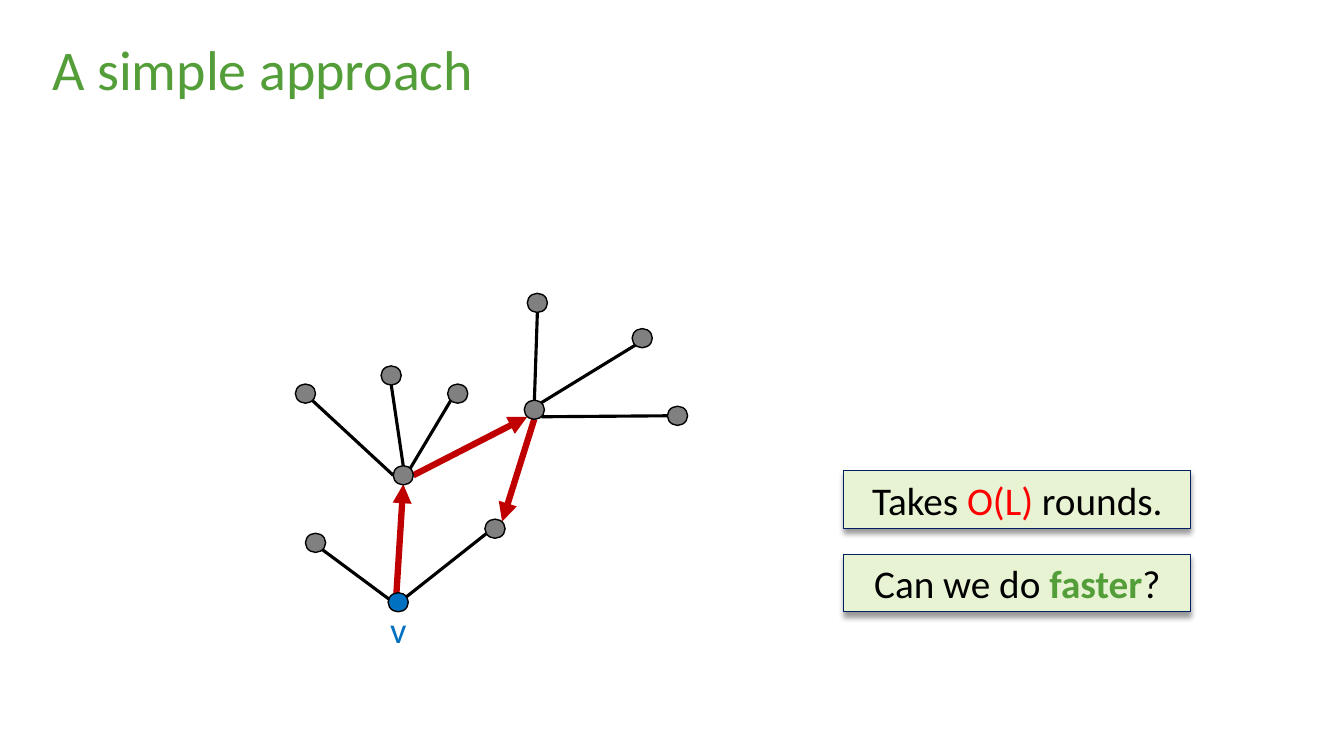
from lxml import etree
from pptx import Presentation
from pptx.dml.color import RGBColor
from pptx.enum.shapes import MSO_CONNECTOR, MSO_SHAPE
from pptx.enum.text import MSO_ANCHOR, MSO_AUTO_SIZE, PP_ALIGN
from pptx.oxml.ns import qn
from pptx.util import Inches, Pt

STRAIGHT = MSO_CONNECTOR.STRAIGHT
OVAL, RECTANGLE = MSO_SHAPE.OVAL, MSO_SHAPE.RECTANGLE
MIDDLE, FIT = MSO_ANCHOR.MIDDLE, MSO_AUTO_SIZE.SHAPE_TO_FIT_TEXT
LEFT, CENTER = PP_ALIGN.LEFT, PP_ALIGN.CENTER

BLACK = RGBColor(0x00, 0x00, 0x00)
GRAY = RGBColor(0x80, 0x80, 0x80)
BLUE = RGBColor(0x00, 0x70, 0xC0)
DARK_RED = RGBColor(0xC0, 0x00, 0x00)
RED = RGBColor(0xFF, 0x00, 0x00)
GREEN = RGBColor(0x54, 0x9E, 0x39)
PALE_GREEN = RGBColor(0xE8, 0xF3, 0xD4)
NAVY = RGBColor(0x00, 0x20, 0x60)
FONT = "Calibri"

# Content: node name -> left, top
NODE_WIDTH, NODE_HEIGHT = 0.2, 0.19
NODES = {
    "low left": (3.03, 5.29),
    "hub": (3.9, 4.62),
    "low right": (4.81, 5.15),
    "v": (3.85, 5.88),
    "hub left": (2.93, 3.81),
    "hub top": (3.78, 3.63),
    "hub right": (4.44, 3.81),
    "far hub": (5.2, 3.97),
    "far top": (5.23, 2.91),
    "far upper": (6.27, 3.26),
    "far right": (6.62, 4.03),
}

# Where edges meet a node, as offsets from its centre
SITES = {
    "N": (0, -0.09), "S": (0, 0.09), "W": (-0.1, 0), "E": (0.1, 0),
    "NE": (0.07, -0.07), "SE": (0.07, 0.07), "SW": (-0.07, 0.07),
    "inner N": (-0.02, -0.06), "inner W": (-0.09, -0.03),
    "inner E": (0.05, -0.03), "inner SW": (-0.05, 0.02),
}
TREE_EDGES = [
    ("low right", "inner SW", "v", "inner E"),
    ("low left", "SE", "v", "inner W"),
    ("hub right", "SW", "hub", "NE"),
    ("hub top", "S", "hub", "N"),
    ("hub left", "SE", "hub", "W"),
    ("far top", "S", "far hub", "N"),
    ("far upper", "SW", "far hub", "NE"),
    ("far right", "W", "far hub", "SE"),
]
WALK = [
    ("v", "inner N", "hub", "S"),
    ("hub", "E", "far hub", "SW"),
    ("far hub", "S", "low right", "NE"),
]

# Text spans: wording, colour, bold
TITLE = [("A simple approach", GREEN, False)]
NODE_LABEL = [("v", BLUE, False)]
CALLOUTS = [
    [("Takes ", BLACK, False), ("O(L)", RED, False), (" rounds.", BLACK, False)],
    [("Can we do ", BLACK, False), ("faster", GREEN, True), ("?", BLACK, False)],
]
CALLOUT_LEFT, CALLOUT_TOP, CALLOUT_STEP = 8.37, 4.67, 0.83
CALLOUT_WIDTH, CALLOUT_HEIGHT = 3.44, 0.57


def site_point(node, site):
    left, top = NODES[node]
    across, down = SITES[site]
    return (Inches(left + NODE_WIDTH / 2 + across),
            Inches(top + NODE_HEIGHT / 2 + down))


def add_edge(page, edge, color, width, arrow=False):
    start, start_site, end, end_site = edge
    line = page.shapes.add_connector(
        STRAIGHT, *site_point(start, start_site), *site_point(end, end_site))
    line.line.color.rgb = color
    line.line.width = Pt(width)
    if arrow:
        etree.SubElement(line.line._get_or_add_ln(), qn("a:tailEnd"), type="triangle")
    etree.SubElement(line._element.spPr, qn("a:effectLst"))


def add_solid(page, kind, box, fill, outline, width):
    shape = page.shapes.add_shape(kind, *map(Inches, box))
    shape.shadow.inherit = False
    shape.fill.solid()
    shape.fill.fore_color.rgb = fill
    shape.line.color.rgb = outline
    shape.line.width = Pt(width)
    return shape


def add_drop_shadow(shape):
    effects = shape._element.spPr.find(qn("a:effectLst"))
    shadow = etree.SubElement(
        effects, qn("a:outerShdw"), blurRad=str(Pt(4)), dist=str(Pt(3)),
        dir=str(90 * 60000), algn="t", rotWithShape="0")
    color = etree.SubElement(shadow, qn("a:srgbClr"), val=str(BLACK))
    etree.SubElement(color, qn("a:alpha"), val="40000")


def write(shape, spans, size, align=LEFT, wrap=True):
    frame = shape.text_frame
    frame.word_wrap = wrap
    frame.auto_size = FIT
    para = frame.paragraphs[0]
    para.alignment = align
    para.font.name = FONT
    para.font.size = Pt(size)
    for wording, color, bold in spans:
        span = para.add_run()
        span.text = wording
        span.font.color.rgb = color
        span.font.bold = bold


def add_label(page, box, spans, size, wrap=True):
    write(page.shapes.add_textbox(*map(Inches, box)), spans, size, wrap=wrap)


def main():
    deck = Presentation()
    deck.slide_width, deck.slide_height = Inches(13.33), Inches(7.5)
    page = deck.slides.add_slide(deck.slide_layouts[6])

    add_label(page, (0.42, 0.29, 4.42, 0.77), TITLE, 40, wrap=False)

    # Graph: edges below, nodes above
    for edge in TREE_EDGES:
        add_edge(page, edge, BLACK, 2.25)
    for edge in WALK:
        add_edge(page, edge, DARK_RED, 4.5, arrow=True)
    for name, (left, top) in NODES.items():
        fill = BLUE if name == "v" else GRAY
        add_solid(page, OVAL, (left, top, NODE_WIDTH, NODE_HEIGHT), fill, BLACK, 1)
    add_label(page, (3.77, 5.97, 0.46, 0.54), NODE_LABEL, 26)

    # Callouts
    for row, spans in enumerate(CALLOUTS):
        box = (CALLOUT_LEFT, CALLOUT_TOP + row * CALLOUT_STEP,
               CALLOUT_WIDTH, CALLOUT_HEIGHT)
        callout = add_solid(page, RECTANGLE, box, PALE_GREEN, NAVY, 0.75)
        add_drop_shadow(callout)
        callout.text_frame.vertical_anchor = MIDDLE
        write(callout, spans, 28, CENTER)

    deck.save("out.pptx")


if __name__ == "__main__":
    main()
